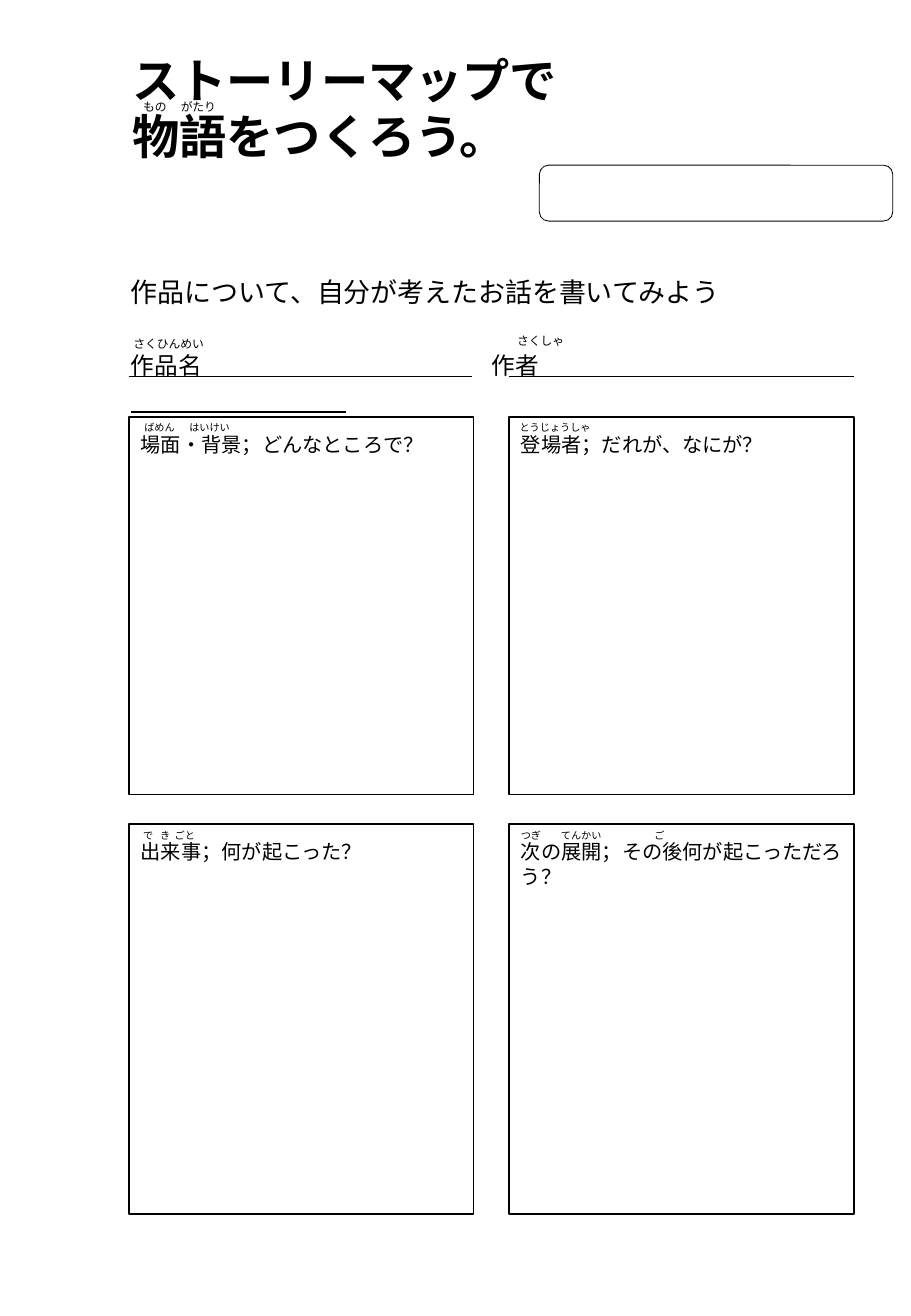
import pptx
import pptx.util
import pptx.dml.color
import pptx.enum.shapes
import pptx.enum.text
import pptx.oxml.ns
from lxml import etree

Inches = pptx.util.Inches
Pt = pptx.util.Pt
BLACK = pptx.dml.color.RGBColor(0x00, 0x00, 0x00)
GOTHIC = "Noto Sans CJK JP"
LATIN = "Calibri"
SHAPES = pptx.enum.shapes.MSO_SHAPE


def write(holder, lines, size, typeface=GOTHIC, bold=False, tabs=()):
    """Fill a text holder with left-aligned lines and optional tab stops."""
    frame = holder.text_frame
    frame_format = {
        "word_wrap": True,
        "auto_size": pptx.enum.text.MSO_AUTO_SIZE.NONE,
        "vertical_anchor": pptx.enum.text.MSO_ANCHOR.TOP,
    }
    for name, value in frame_format.items():
        setattr(frame, name, value)
    frame.text = "\n".join(lines)
    for paragraph in frame.paragraphs:
        paragraph.alignment = pptx.enum.text.PP_ALIGN.LEFT
        paragraph.space_before = Pt(0)
        paragraph.line_spacing = Pt(size * 1.2)
        if tabs:
            stops = etree.SubElement(paragraph._p.get_or_add_pPr(),
                                     pptx.oxml.ns.qn("a:tabLst"))
            for position in tabs:
                etree.SubElement(stops, pptx.oxml.ns.qn("a:tab"),
                                 pos=str(Inches(position)), algn="l")
        for run in paragraph.runs:
            font_format = {"size": Pt(size), "bold": bold, "name": typeface}
            for name, value in font_format.items():
                setattr(run.font, name, value)
            run.font.color.rgb = BLACK
            etree.SubElement(run._r.get_or_add_rPr(),
                             pptx.oxml.ns.qn("a:ea"), typeface=typeface)


def outline(kind, left, top, width, height, weight):
    """Draw an unfilled frame with a black outline."""
    frame = slide.shapes.add_shape(kind, Inches(left), Inches(top),
                                   Inches(width), Inches(height))
    frame.shadow.inherit = False
    frame.fill.background()
    frame.line.color.rgb = BLACK
    frame.line.width = Pt(weight)


presentation = pptx.Presentation()
presentation.slide_width = Inches(7.5)
presentation.slide_height = Inches(10.83)
slide = presentation.slides.add_slide(presentation.slide_layouts[5])

# Title
title = slide.shapes.title
title_place = {"left": 0.99, "top": 0.37, "width": 6.35, "height": 1.04}
for name, value in title_place.items():
    setattr(title, name, Inches(value))
write(title, ["ストーリーマップで", "物語をつくろう。"], 28, bold=True)

# Name field
outline(SHAPES.ROUNDED_RECTANGLE, 4.44, 1.36, 2.91, 0.46, 0.5)

# Four story panels
COLUMNS = (1.06, 4.19)
PANEL_WIDTH = 2.84
ROWS = ((3.43, 3.11), (6.78, 3.21))
PROMPTS = (
    ("場面・背景；どんなところで？", "登場者；だれが、なにが？"),
    ("出来事；何が起こった？", "次の展開；その後何が起こっただろう？"),
)
for (top, height), row_prompts in zip(ROWS, PROMPTS):
    for left, prompt in zip(COLUMNS, row_prompts):
        outline(SHAPES.RECTANGLE, left, top, PANEL_WIDTH, height, 1)
        prompt_box = slide.shapes.add_textbox(
            Inches(left), Inches(top + 0.08), Inches(2.92), Inches(0.3))
        write(prompt_box, [prompt], 12, LATIN)

# Instruction, field labels and furigana: text, left, top, width, size, tabs
LABELS = (
    ("作品について、自分が考えたお話を書いてみよう", 0.98, 2.22, 6.4, 16, ()),
    ("作品名", 0.98, 2.84, 1, 14, ()),
    ("作者", 3.95, 2.84, 1, 14, ()),
    ("もの\tがたり", 1.08, 0.77, 0.89, 7, (0.31,)),
    ("さくひんめい", 1, 2.72, 0.79, 7, ()),
    ("さくしゃ", 4.16, 2.7, 0.79, 7, ()),
    ("ばめん\tはいけい", 1.09, 3.42, 1.06, 6, (0.37,)),
    ("とうじょうしゃ", 4.18, 3.42, 1, 6, ()),
    ("で\tき\tごと", 1.08, 6.78, 0.98, 6, (0.14, 0.26)),
    ("つぎ\tてんかい\tご", 4.19, 6.78, 1.56, 6, (0.33, 1.1)),
)
for text, left, top, width, size, tabs in LABELS:
    label = slide.shapes.add_textbox(
        Inches(left), Inches(top), Inches(width),
        Inches(0.1 + size * 1.2 / 72))
    write(label, [text], size, tabs=tabs)

# Writing lines: start, end, height on the page
WRITING_LINES = ((1.06, 3.89, 3.1), (4.19, 7.03, 3.1), (1.08, 2.85, 3.39))
for start, end, y in WRITING_LINES:
    rule = slide.shapes.add_connector(
        pptx.enum.shapes.MSO_CONNECTOR.STRAIGHT,
        Inches(start), Inches(y), Inches(end), Inches(y))
    rule.line.color.rgb = BLACK
    rule.line.width = Pt(0.75)
    etree.SubElement(rule._element.spPr, pptx.oxml.ns.qn("a:effectLst"))

presentation.save("out.pptx")
